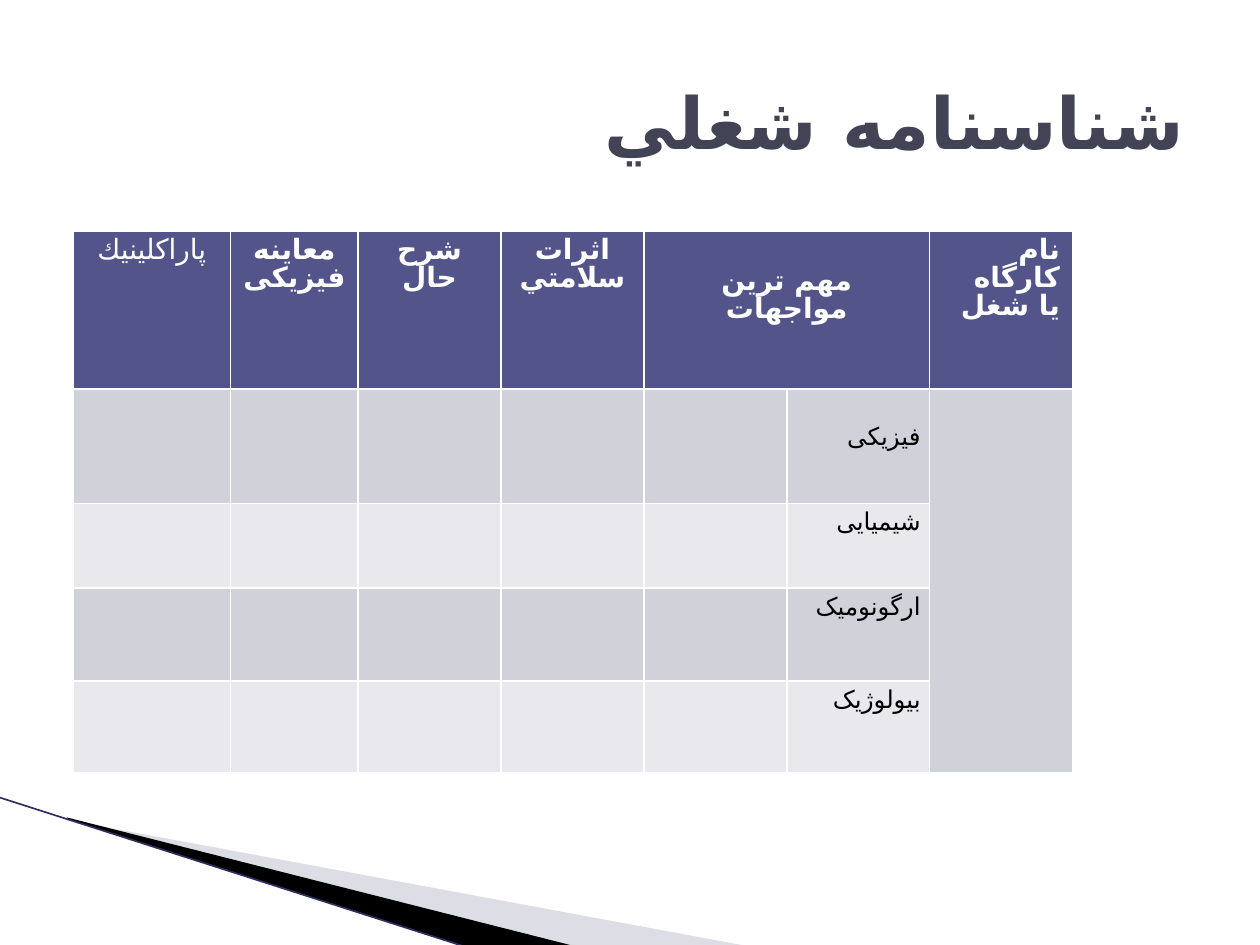
from lxml import etree
from pptx import Presentation
from pptx.dml.color import RGBColor
from pptx.enum.shapes import MSO_CONNECTOR
from pptx.enum.text import MSO_ANCHOR, PP_ALIGN
from pptx.oxml.ns import qn
from pptx.util import Cm, Pt

CENTER, RIGHT, JUSTIFY = PP_ALIGN.CENTER, PP_ALIGN.RIGHT, PP_ALIGN.JUSTIFY
MIDDLE = MSO_ANCHOR.MIDDLE
STRAIGHT = MSO_CONNECTOR.STRAIGHT

HEADING_FONT, BODY_FONT = "DejaVu Sans Mono", "Calibri"
ARABIC_FONT = "DejaVu Sans"
WHITE, BLACK, HEADER_FILL = "FFFFFF", "000000", "53548A"
BANDS = ("D1D1DA", "E9E9ED")

COLUMN_WIDTHS = [3.18, 2.57] + [2.88] * 5
ROW_HEIGHTS = [3.18, 2.31, 1.7, 1.88, 1.85]
EXPOSURE_COLUMN, JOB_COLUMN = 4, 6
# Column, lines, bold
HEADERS = [
    (0, ["پاراكلينيك"], False),
    (1, ["معاینه فیزیکی"], True),
    (2, ["شرح حال"], True),
    (3, ["اثرات سلامتي"], True),
    (EXPOSURE_COLUMN, ["مهم ترین مواجهات"], True),
    (JOB_COLUMN, ["نام کارگاه", "يا شغل"], True),
]
EXPOSURES = ["فیزیکی", "شیمیایی", "ارگونومیک", "بیولوژیک"]


def colour(value):
    return RGBColor.from_string(value)


def write(para, text, font, size, tone, bold=False, align=CENTER, rtl=False):
    para.alignment = align
    if rtl:
        para._p.get_or_add_pPr().set("rtl", "1")
    span = para.add_run()
    span.text = text
    span.font.name = font
    span.font.size = Pt(size)
    span.font.bold = bold
    span.font.color.rgb = colour(tone)
    # Typeface for the Arabic script
    etree.SubElement(span._r.get_or_add_rPr(), qn("a:cs"),
                     typeface=ARABIC_FONT)


def set_borders(cell):
    properties = cell._tc.get_or_add_tcPr()
    for position, side in enumerate(("a:lnL", "a:lnR", "a:lnT", "a:lnB")):
        line = etree.Element(qn(side), w=str(Pt(1)))
        fill = etree.SubElement(line, qn("a:solidFill"))
        etree.SubElement(fill, qn("a:srgbClr"), val=WHITE)
        properties.insert(position, line)


def add_wedge(page, left, top, points, tone, opacity=None):
    corners = [(Cm(left + x), Cm(top + y)) for x, y in points]
    builder = page.shapes.build_freeform(*corners[0], scale=1.0)
    builder.add_line_segments(corners[1:], close=True)
    wedge = builder.convert_to_shape()
    wedge.shadow.inherit = False
    wedge.line.fill.background()
    wedge.fill.solid()
    wedge.fill.fore_color.rgb = colour(tone)
    if opacity:
        tint = wedge._element.spPr.find(".//" + qn("a:srgbClr"))
        etree.SubElement(tint, qn("a:alpha"), val=str(opacity * 1000))


def add_corner(page, left, top):
    """Sweeping wedges in the lower left corner."""
    add_wedge(page, left, top,
              [(1.4, 0.46), (15.11, 3), (11.58, 3), (1.4, 0.43)],
              "AAAABF", 40)
    add_wedge(page, left, top,
              [(1.35, 0.4), (11.61, 3), (9.45, 3.02), (1.37, 0.43)], BLACK)
    edge = page.shapes.add_connector(
        STRAIGHT, Cm(left), Cm(top), Cm(left + 9.42), Cm(top + 3.02))
    edge.line.color.rgb = colour("2F2F60")
    edge.line.width = Pt(0.95)
    etree.SubElement(edge._element.spPr, qn("a:effectLst"))


def add_title(page, left, top, width, height):
    box = page.shapes.add_textbox(Cm(left), Cm(top), Cm(width), Cm(height))
    frame = box.text_frame
    frame.word_wrap = True
    frame.vertical_anchor = MIDDLE
    frame.margin_top = Cm(0.3)
    write(frame.paragraphs[0], "شناسنامه شغلي", HEADING_FONT, 41,
          "424456", True, RIGHT, True)


def add_job_table(page, left, top):
    table = page.shapes.add_table(
        len(ROW_HEIGHTS), len(COLUMN_WIDTHS), Cm(left), Cm(top),
        Cm(sum(COLUMN_WIDTHS)), Cm(sum(ROW_HEIGHTS))).table
    for column, width in zip(table.columns, COLUMN_WIDTHS):
        column.width = Cm(width)
    for row, height in zip(table.rows, ROW_HEIGHTS):
        row.height = Cm(height)

    # Header and banded fills
    for r, row in enumerate(table.rows):
        for cell in row.cells:
            cell.fill.solid()
            cell.fill.fore_color.rgb = colour(
                BANDS[(r - 1) % 2] if r else HEADER_FILL)
            set_borders(cell)
    table.cell(0, EXPOSURE_COLUMN).merge(table.cell(0, EXPOSURE_COLUMN + 1))
    table.cell(1, JOB_COLUMN).merge(
        table.cell(len(ROW_HEIGHTS) - 1, JOB_COLUMN))

    # Header labels
    for c, lines, bold in HEADERS:
        cell = table.cell(0, c)
        if c == EXPOSURE_COLUMN:
            cell.margin_top = Cm(0.75)
        for i, line in enumerate(lines):
            frame = cell.text_frame
            para = frame.add_paragraph() if i else frame.paragraphs[0]
            para.line_spacing = 0.86
            write(para, line, HEADING_FONT, 16, WHITE, bold,
                  RIGHT if c == JOB_COLUMN else CENTER)

    # Kinds of exposure
    for r, label in enumerate(EXPOSURES, start=1):
        cell = table.cell(r, EXPOSURE_COLUMN + 1)
        cell.margin_left = cell.margin_right = Cm(0.18)
        cell.margin_top = Cm(0.6 if r == 1 else 0)
        cell.margin_bottom = 0
        para = cell.text_frame.paragraphs[0]
        para.line_spacing = 1.15
        write(para, label, BODY_FONT, 14, BLACK, align=JUSTIFY, rtl=True)


def main():
    deck = Presentation()
    deck.slide_width, deck.slide_height = Cm(25.4), Cm(19.05)
    page = deck.slides.add_slide(deck.slide_layouts[6])
    add_corner(page, 0, 16.08)
    add_job_table(page, 1.47, 4.66)
    add_title(page, 1.27, 0.76, 22.86, 3.18)
    deck.save("out.pptx")


if __name__ == "__main__":
    main()
